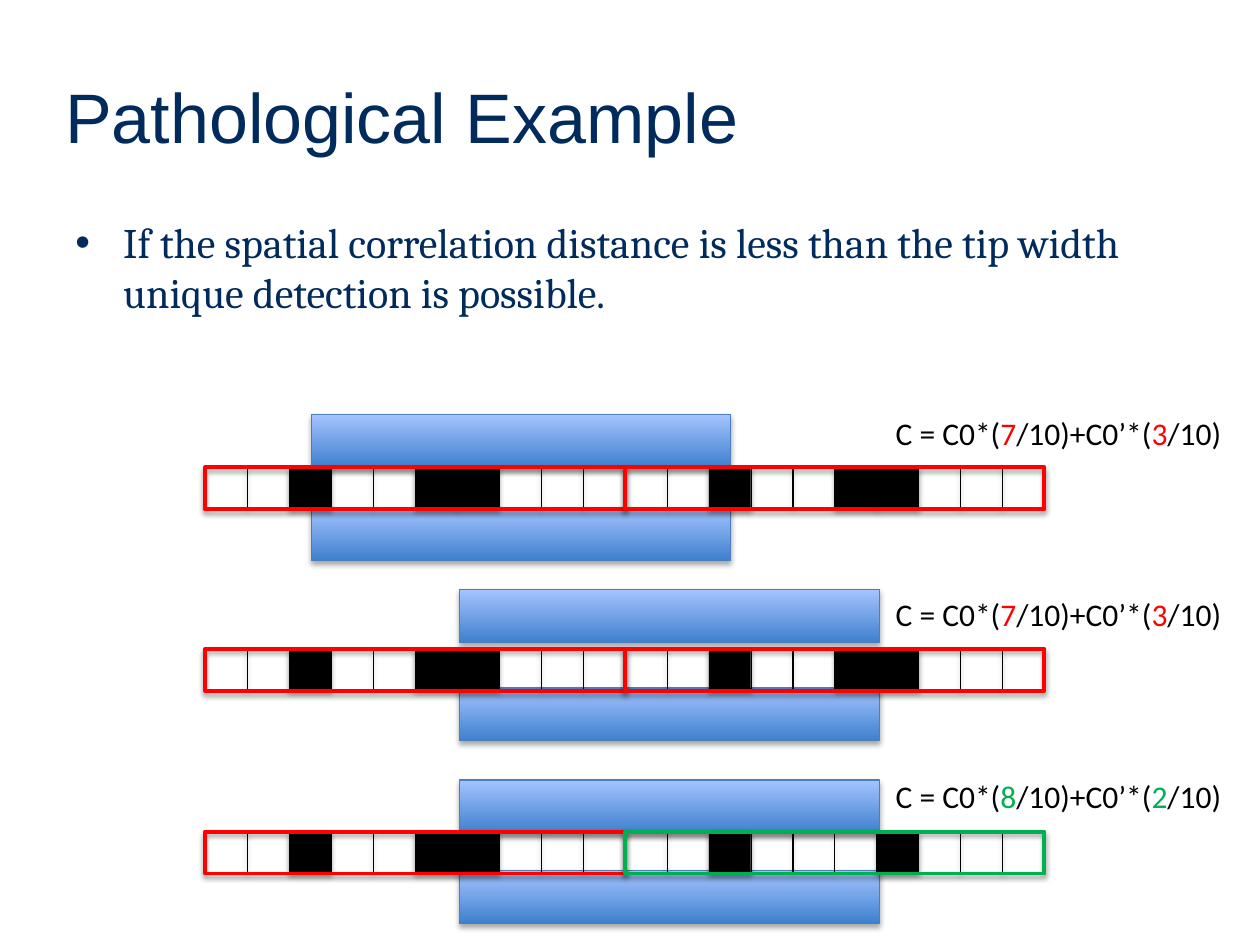
from dataclasses import dataclass
from typing import Any

from lxml import etree
from pptx import Presentation
from pptx import util as u
from pptx.dml.color import RGBColor
from pptx.enum import shapes, text
from pptx.oxml import ns

NAVY, BLACK, RED, GREEN = "002B5C", "000000", "FF0000", "00B050"
STRIP_LEFT, BLOCK_WIDTH, CELLS = 1.63, 3.33, 10
CELL = BLOCK_WIDTH / CELLS
TIP_HEIGHT = 0.42


def rgb(value):
    return RGBColor.from_string(value)


@dataclass
class Sketch:
    """Draws the text and strip elements of one slide in a shared style."""

    slide: Any
    tip_colours: tuple = ("3F80CE", "A4C4FF")
    tip_line: str = "4B7EBC"

    def textbox(self, left, top, width, height, runs, font, size, wrap=True):
        box = self.slide.shapes.add_textbox(
            u.Inches(left), u.Inches(top), u.Inches(width), u.Inches(height))
        frame = box.text_frame
        frame.word_wrap = wrap
        paragraph = frame.paragraphs[0]
        for words, colour in runs:
            run = paragraph.add_run()
            run.text = words
            run.font.name = font
            run.font.size = u.Pt(size)
            run.font.color.rgb = rgb(colour)
        return frame

    def title(self, words):
        frame = self.textbox(0.42, 0.42, 9.08, 1, [(words, NAVY)], "Arial", 40)
        frame.vertical_anchor = text.MSO_ANCHOR.MIDDLE

    def bullet(self, words):
        frame = self.textbox(0.5, 1.67, 9, 5.03, [(words, NAVY)], "Cambria", 24)
        properties = frame.paragraphs[0]._p.get_or_add_pPr()
        indent = u.Inches(0.38)
        properties.set("marL", str(indent))
        properties.set("indent", str(-indent))
        etree.SubElement(properties, ns.qn("a:buFont"), typeface="Arial")
        etree.SubElement(properties, ns.qn("a:buChar"), char="•")

    def formula(self, top, share, rest, colour):
        runs = [("C = C0*(", BLACK), (share, colour), ("/10)+C0’*(", BLACK),
                (rest, colour), ("/10)", BLACK)]
        frame = self.textbox(7.01, top, 2.82, 0.4, runs, "Calibri", 18, wrap=False)
        frame.auto_size = text.MSO_AUTO_SIZE.SHAPE_TO_FIT_TEXT

    def rectangle(self, left, top, width, height, line, weight):
        rect = self.slide.shapes.add_shape(
            shapes.MSO_SHAPE.RECTANGLE,
            u.Inches(left), u.Inches(top), u.Inches(width), u.Inches(height))
        rect.fill.background()
        rect.line.color.rgb = rgb(line)
        rect.line.width = u.Pt(weight)
        rect.shadow.inherit = False
        effects = rect._element.spPr.find(ns.qn("a:effectLst"))
        shadow = etree.SubElement(
            effects, ns.qn("a:outerShdw"), blurRad=str(u.Pt(3.1)),
            dist=str(u.Pt(1.8)), dir="5400000", rotWithShape="0")
        shade = etree.SubElement(shadow, ns.qn("a:srgbClr"), val=BLACK)
        etree.SubElement(shade, ns.qn("a:alpha"), val="35000")
        return rect

    def tip(self, left, top):
        half = self.rectangle(left, top, BLOCK_WIDTH, TIP_HEIGHT, self.tip_line, 0.75)
        half.fill.gradient()
        half.fill.gradient_angle = 90
        for stop, colour in zip(half.fill.gradient_stops, self.tip_colours):
            stop.color.rgb = rgb(colour)

    def strip(self, top, blocks):
        lefts = [STRIP_LEFT + i * BLOCK_WIDTH for i in range(len(blocks))]
        for left, (pattern, _) in zip(lefts, blocks):
            for i, mark in enumerate(pattern):
                if mark == "-":
                    continue
                cell = self.rectangle(left + i * CELL, top, CELL, CELL, BLACK, 0.25)
                if mark == "#":
                    cell.fill.solid()
                    cell.fill.fore_color.rgb = rgb(BLACK)
        for left, (_, outline) in zip(lefts, blocks):
            self.rectangle(left, top, BLOCK_WIDTH, CELL, outline, 2.25)


def main():
    deck = Presentation()
    deck.slide_width, deck.slide_height = u.Inches(10), u.Inches(7.5)
    sketch = Sketch(deck.slides.add_slide(deck.slide_layouts[6]))
    sketch.title("Pathological Example")
    sketch.bullet("If the spatial correlation distance is less than the tip width "
                  "unique detection is possible.")

    regular = ("..#..##...", RED)
    changed = ("..#..-#...", GREEN)
    cases = [
        (2.47, (3.29, 4.03), 3.71, regular, 3.24, ("7", "3")),
        (3.65, (4.68, 5.46), 5.15, regular, 4.67, ("7", "3")),
        (3.65, (6.19, 6.91), 6.6, changed, 6.12, ("8", "2")),
    ]
    for tip_left, tip_tops, strip_top, second, formula_top, counts in cases:
        for tip_top in tip_tops:
            sketch.tip(tip_left, tip_top)
        sketch.strip(strip_top, [regular, second])
        sketch.formula(formula_top, *counts, second[1])
    deck.save("out.pptx")


if __name__ == "__main__":
    main()
